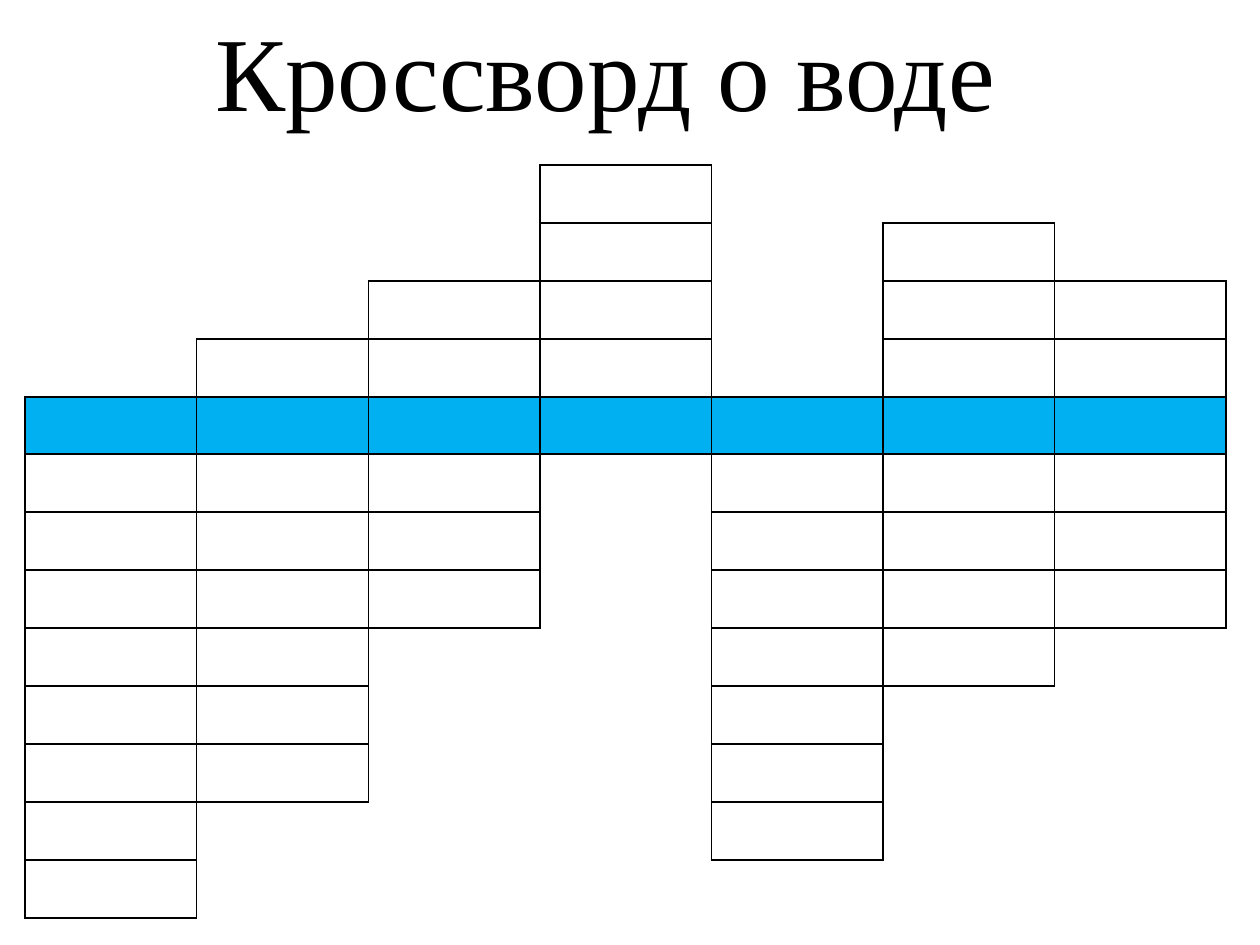
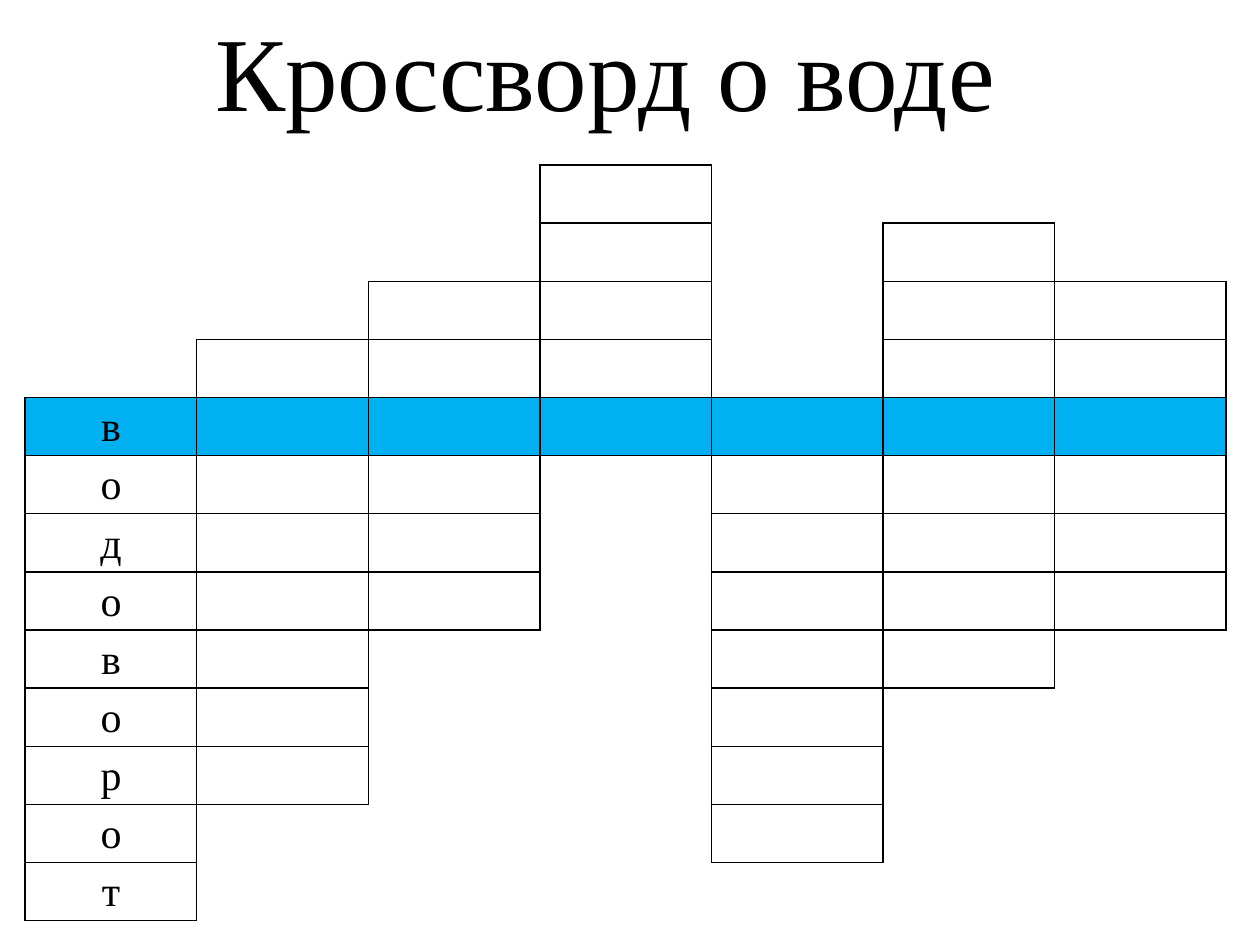
from lxml.etree import SubElement
from pptx import Presentation
from pptx.dml.color import RGBColor
from pptx.enum.text import MSO_ANCHOR, PP_ALIGN
from pptx.oxml.ns import qn
from pptx.util import Inches, Pt

# Content
TITLE = "Кроссворд о воде"
WORD_SPANS = [(4, 12), (3, 10), (2, 7), (0, 4), (4, 11), (1, 8), (2, 7)]  # first and last row
KEY_ROW = 4
ROW_COUNT = 13
SLIDES = [
    {"grid_height": 5.98, "answers": {}},
    {"grid_height": 5.99, "answers": {0: "водоворот"}},
]

# Shared look
COLORS = {"ink": "000000", "key": "00B0F0"}
FONT = "Times New Roman"
GRID_LEFT, GRID_TOP, GRID_WIDTH = 0.2, 1.31, 9.53
KEY_ROW_HEIGHT = 0.45
BORDER_WIDTH = Pt(1)
SIDES = {"lnL": (0, -1), "lnR": (0, 1), "lnT": (-1, 0), "lnB": (1, 0)}
CELL_FORMAT = {
    "margin_left": Inches(0.07), "margin_right": Inches(0.07),
    "margin_top": 0, "margin_bottom": 0,
}
TABLE_FORMAT = {"first_row": False, "horz_banding": False}


def apply(target, values):
    for name, value in values.items():
        setattr(target, name, value)


def write(paragraph, text, size):
    run = paragraph.add_run()
    run.text = text
    apply(run.font, {"name": FONT, "size": Pt(size)})
    run.font.color.rgb = RGBColor.from_string(COLORS["ink"])


def in_word(row, column):
    if not 0 <= column < len(WORD_SPANS):
        return False
    first, last = WORD_SPANS[column]
    return first <= row <= last


def draw_borders(cell, row, column):
    """Show every edge that touches a letter square."""
    properties = cell._tc.get_or_add_tcPr()
    for position, (side, (down, right)) in enumerate(SIDES.items()):
        line = SubElement(properties, qn(f"a:{side}"), w=str(BORDER_WIDTH))
        if in_word(row, column) or in_word(row + down, column + right):
            fill = SubElement(line, qn("a:solidFill"))
            SubElement(fill, qn("a:srgbClr"), val=COLORS["ink"])
        else:
            SubElement(line, qn("a:noFill"))
        properties.insert(position, line)


def add_title(slide):
    title = slide.shapes.add_textbox(Inches(1.61), 0, Inches(6.69), Inches(1.11))
    apply(title.text_frame, {"word_wrap": True, "vertical_anchor": MSO_ANCHOR.MIDDLE})
    write(title.text_frame.paragraphs[0], TITLE, 60)


def add_crossword(slide, grid_height, answers):
    crossword = slide.shapes.add_table(
        ROW_COUNT, len(WORD_SPANS), Inches(GRID_LEFT), Inches(GRID_TOP),
        Inches(GRID_WIDTH), Inches(grid_height)).table
    apply(crossword, TABLE_FORMAT)
    for column in crossword.columns:
        column.width = Inches(GRID_WIDTH / len(WORD_SPANS))
    row_height = (grid_height - KEY_ROW_HEIGHT) / (ROW_COUNT - 1)
    for index, row in enumerate(crossword.rows):
        row.height = Inches(KEY_ROW_HEIGHT if index == KEY_ROW else row_height)

    # Squares
    for row in range(ROW_COUNT):
        for column in range(len(WORD_SPANS)):
            square = crossword.cell(row, column)
            apply(square, CELL_FORMAT)
            if row == KEY_ROW:
                square.fill.solid()
                square.fill.fore_color.rgb = RGBColor.from_string(COLORS["key"])
            else:
                square.fill.background()
            draw_borders(square, row, column)

    # Solved words
    for column, word in answers.items():
        for row, letter in enumerate(word, WORD_SPANS[column][0]):
            paragraph = crossword.cell(row, column).text_frame.paragraphs[0]
            apply(paragraph, {"alignment": PP_ALIGN.CENTER, "line_spacing": 1.15})
            write(paragraph, letter, 24)


def main():
    deck = Presentation()
    apply(deck, {"slide_width": Inches(10), "slide_height": Inches(7.5)})
    for content in SLIDES:
        slide = deck.slides.add_slide(deck.slide_layouts[6])
        add_crossword(slide, **content)
        add_title(slide)
    deck.save("out.pptx")


if __name__ == "__main__":
    main()
